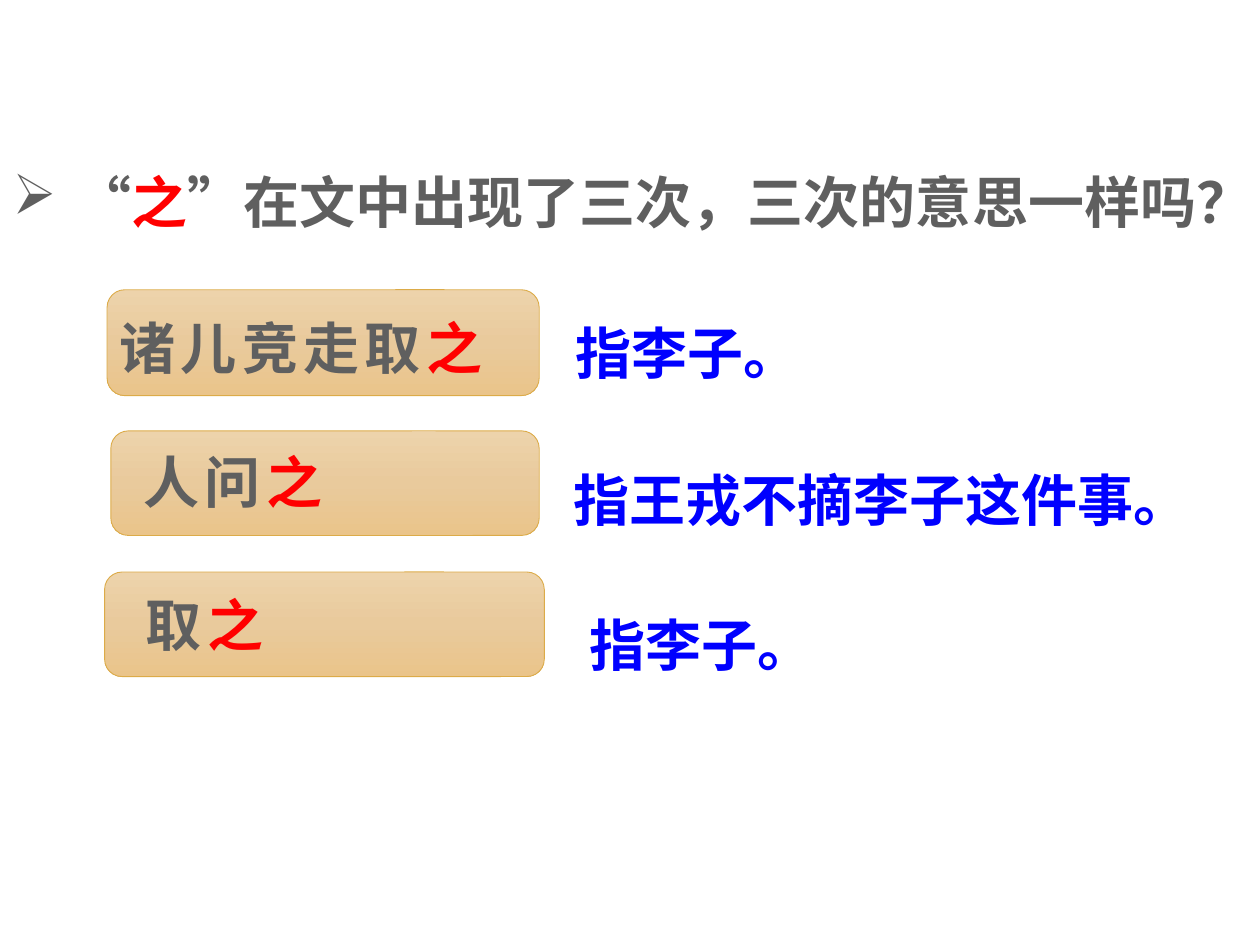
from copy import deepcopy

from lxml.etree import SubElement
from pptx import Presentation
from pptx.dml.color import RGBColor
from pptx.enum.shapes import MSO_SHAPE
from pptx.enum.text import MSO_ANCHOR, MSO_AUTO_SIZE, PP_ALIGN
from pptx.oxml.ns import qn
from pptx.util import Inches, Pt

GREY, RED, BLUE = "5F5F5F", "FF0000", "0000FF"
GOLD_STOPS = [(0, "EDD3AB"), (0.5, "E9CA9C"), (1, "EAC48A")]
GOLD_LINE = "DCAB48"


def colour(value):
    return RGBColor.from_string(value)


class Lesson:
    font = "Noto Sans CJK SC"
    size = Pt(32)

    def __init__(self, deck):
        deck.slide_width, deck.slide_height = Inches(10), Inches(7.5)
        self.slide = deck.slides.add_slide(deck.slide_layouts[5])

    def fill_text(self, shape, parts, line_spacing=1.0, letter_spacing=0):
        frame = shape.text_frame
        frame.word_wrap = True
        frame.auto_size = MSO_AUTO_SIZE.SHAPE_TO_FIT_TEXT
        frame.vertical_anchor = MSO_ANCHOR.TOP
        paragraph = frame.paragraphs[0]
        paragraph.alignment = PP_ALIGN.LEFT
        paragraph.line_spacing = line_spacing
        for words, shade in parts:
            run = paragraph.add_run()
            run.text = words
            run.font.size, run.font.bold, run.font.name = self.size, True, self.font
            run.font.color.rgb = colour(shade)
            properties = run.font._element
            SubElement(properties, qn("a:ea"), typeface=self.font)
            if letter_spacing:
                properties.set("spc", str(letter_spacing * 100))
        return paragraph

    def question(self, box, parts):
        title = self.slide.shapes.title
        title.left, title.top, title.width, title.height = map(Inches, box)
        properties = self.fill_text(title, parts, line_spacing=1.3)._p.get_or_add_pPr()
        properties.set("marL", str(Inches(0.5)))
        properties.set("indent", str(Inches(-0.5)))
        SubElement(properties, qn("a:buChar"), char="➢")

    def text(self, box, parts, **spacing):
        self.fill_text(self.slide.shapes.add_textbox(*map(Inches, box)), parts, **spacing)

    def callout(self, box):
        card = self.slide.shapes.add_shape(
            MSO_SHAPE.ROUNDED_RECTANGULAR_CALLOUT, *map(Inches, box))
        card.shadow.inherit = False
        for index, value in enumerate((0.237, -0.501, 0.167)):
            card.adjustments[index] = value
        card.fill.gradient()
        card.fill.gradient_angle = 270
        first = card.fill.gradient_stops[0]._gs
        first.addnext(deepcopy(first))
        for stop, (position, shade) in zip(card.fill.gradient_stops, GOLD_STOPS):
            stop.position = position
            stop.color.rgb = colour(shade)
        card.line.color.rgb = colour(GOLD_LINE)
        card.line.width = Pt(0.5)


def main():
    deck = Presentation()
    lesson = Lesson(deck)
    lesson.question((0, 1.12, 9.88, 0.8), [
        ("“", GREY), ("之", RED), ("”在文中出现了三次，三次的意思一样吗？", GREY)])

    examples = [
        ((0.85, 2.3, 3.43, 0.84), "诸儿竞走取", (0.85, 2.44, 3.59, 0.64),
         "指李子。", (4.47, 2.21, 2.28, 0.91)),
        ((0.88, 3.42, 3.4, 0.83), "人问", (1.04, 3.5, 2.2, 0.64),
         "指王戎不摘李子这件事。", (4.45, 3.38, 5.35, 0.91)),
        ((0.83, 4.54, 3.49, 0.83), "取", (1.06, 4.64, 2.2, 0.64),
         "指李子。", (4.58, 4.53, 2.28, 0.91)),
    ]
    for card_box, phrase, phrase_box, meaning, meaning_box in examples:
        lesson.callout(card_box)
        lesson.text(phrase_box, [(phrase, GREY), ("之", RED)], letter_spacing=3)
        lesson.text(meaning_box, [(meaning, BLUE)], line_spacing=1.5)

    deck.save("out.pptx")


if __name__ == "__main__":
    main()
